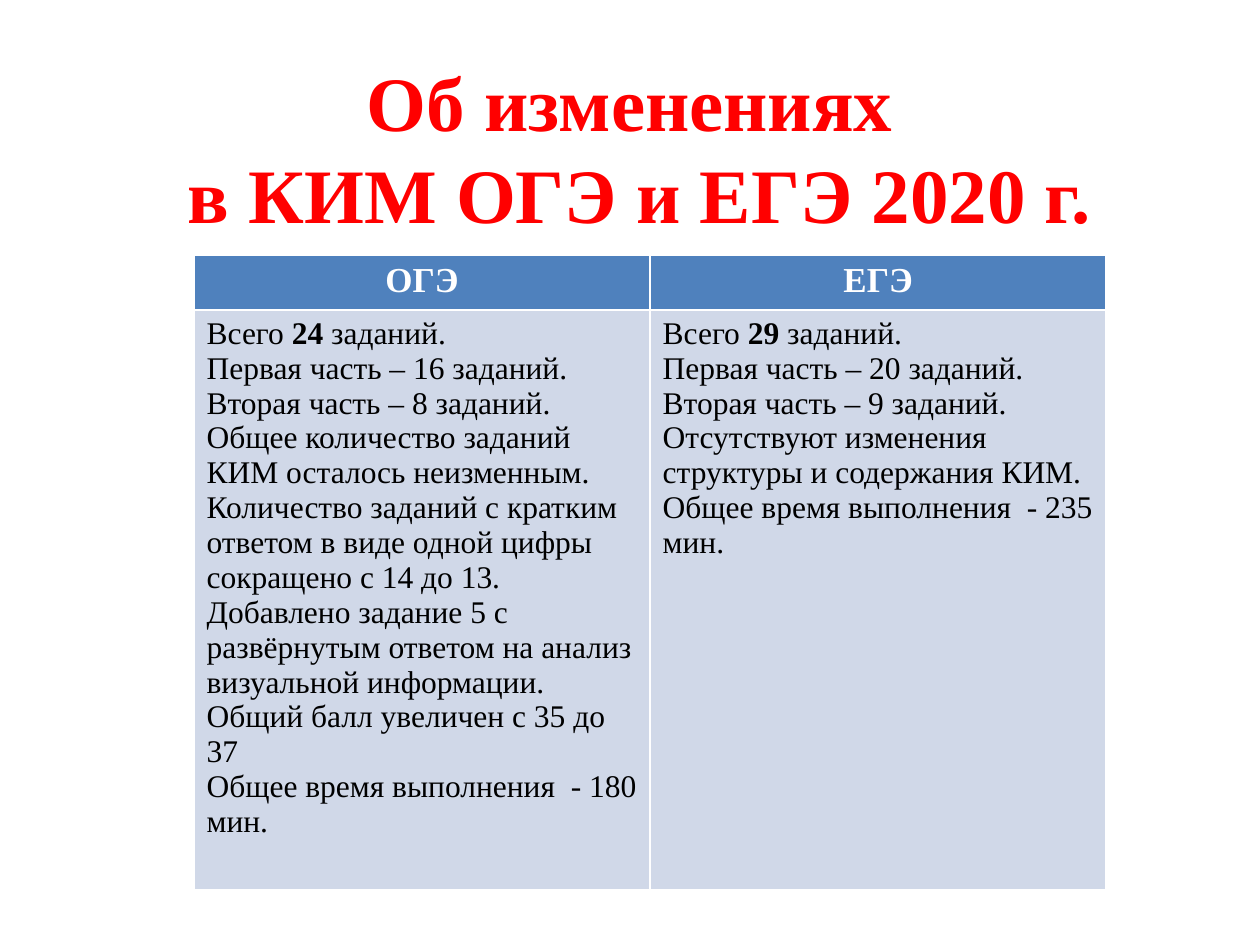
from pptx import Presentation
from pptx.dml.color import RGBColor
from pptx.enum.text import MSO_ANCHOR, PP_ALIGN
from pptx.util import Inches, Pt

OGE = [
    "Всего *24* заданий.",
    "Первая часть – 16 заданий.",
    "Вторая часть – 8 заданий.",
    "Общее количество заданий КИМ осталось неизменным.",
    "Количество заданий с кратким ответом в виде одной цифры сокращено с 14 до 13. "
    "Добавлено задание 5 с развёрнутым ответом на анализ визуальной информации.",
    "Общий балл увеличен с 35 до 37",
    "Общее время выполнения  - 180 мин.",
]
EGE = [
    "Всего *29* заданий.",
    "Первая часть – 20 заданий.",
    "Вторая часть – 9 заданий.",
    "Отсутствуют изменения структуры и содержания КИМ.",
    "Общее время выполнения  - 235 мин.",
]


def color(value):
    """Turn a hex string into a colour."""
    return RGBColor.from_string(value)


class ExamSlide:
    """Hold the style and the slide, placing elements by shares of its size."""

    font = "Times New Roman"
    accent, heading_fill, body_fill = "FF0000", "4F81BD", "D0D8E8"

    def __init__(self, deck):
        """Add a blank slide to the deck."""
        self.deck = deck
        self.slide = deck.slides.add_slide(deck.slide_layouts[6])

    def area(self, left, top, width, height):
        """Turn shares of the slide into lengths."""
        across, down = self.deck.slide_width, self.deck.slide_height
        return (round(left * across), round(top * down),
                round(width * across), round(height * down))

    def style(self, run, size, ink, bold):
        """Format one run."""
        run.font.name, run.font.size, run.font.bold = self.font, Pt(size), bold
        run.font.color.rgb = color(ink)

    def title(self, wording, *shares):
        """Add the centred bold heading of the slide."""
        frame = self.slide.shapes.add_textbox(*self.area(*shares)).text_frame
        frame.word_wrap = True
        frame.vertical_anchor = MSO_ANCHOR.MIDDLE
        frame.text = wording
        heading = frame.paragraphs[0]
        heading.alignment = PP_ALIGN.CENTER
        for run in heading.runs:
            self.style(run, 44, self.accent, True)

    def fill_cell(self, cell, fill, lines, size, ink, bold, align):
        """Fill a cell with paragraphs, making words between asterisks bold."""
        cell.fill.solid()
        cell.fill.fore_color.rgb = color(fill)
        cell.text_frame.text = "\n".join(lines)
        for paragraph, line in zip(cell.text_frame.paragraphs, lines):
            paragraph.alignment = align
            first, *rest = line.split("*")
            paragraph.text = first
            for part in rest:
                paragraph.add_run().text = part
            for index, run in enumerate(paragraph.runs):
                self.style(run, size, ink, bold or index % 2 == 1)

    def comparison(self, exams, row_shares, left, top, width):
        """Add a table with one column for each exam."""
        place = self.area(left, top, width, sum(row_shares))
        table = self.slide.shapes.add_table(2, len(exams), *place).table
        for row, share in zip(table.rows, row_shares):
            row.height = round(share * self.deck.slide_height)
        for column, (exam, changes) in enumerate(exams.items()):
            self.fill_cell(table.cell(0, column), self.heading_fill, [exam],
                           20, "FFFFFF", True, PP_ALIGN.CENTER)
            self.fill_cell(table.cell(1, column), self.body_fill, changes,
                           18, "000000", False, PP_ALIGN.LEFT)


def main():
    """Build and save the slide."""
    deck = Presentation()
    deck.slide_width, deck.slide_height = Inches(10), Inches(7.5)
    page = ExamSlide(deck)
    page.title("Об изменениях\v в КИМ ОГЭ и ЕГЭ 2020 г.", 0.05, 0.04, 0.9, 0.23)
    page.comparison({"ОГЭ": OGE, "ЕГЭ": EGE}, (0.052, 0.547), 0.154, 0.27, 0.724)
    deck.save("out.pptx")


if __name__ == "__main__":
    main()
